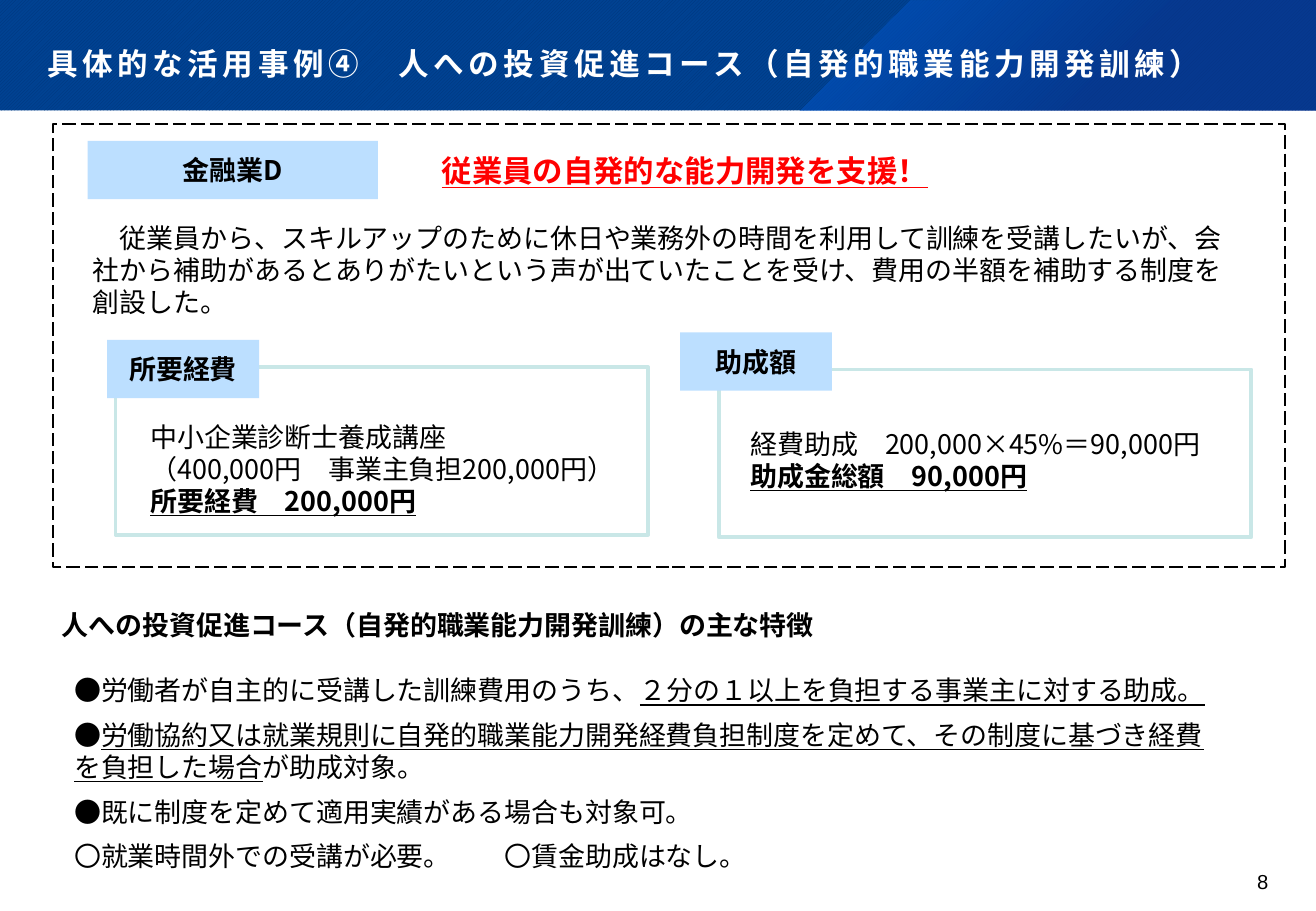
from lxml.etree import SubElement
from pptx import Presentation
from pptx.dml.color import RGBColor
from pptx.enum.dml import MSO_LINE, MSO_PATTERN
from pptx.enum.shapes import MSO_SHAPE
from pptx.enum.text import MSO_ANCHOR, MSO_AUTO_SIZE, PP_ALIGN
from pptx.oxml import parse_xml
from pptx.oxml.ns import nsdecls, qn
from pptx.util import Pt

BLACK = RGBColor(0x00, 0x00, 0x00)
WHITE = RGBColor(0xFF, 0xFF, 0xFF)
RED = RGBColor(0xFF, 0x00, 0x00)
LABEL_BLUE = RGBColor(0xBC, 0xDF, 0xFF)
FRAME_MINT = RGBColor(0xC9, 0xE7, 0xE7)
BAND_DARK = RGBColor(0x00, 0x35, 0x79)
BAND_BLUE = RGBColor(0x00, 0x42, 0x92)
GLOW_LIGHT = RGBColor(0x00, 0x64, 0xDF)
GLOW_DARK = RGBColor(0x0C, 0x33, 0x8E)

JAPANESE_FONT = "Noto Sans CJK JP"
PAGE_WIDTH, PAGE_HEIGHT = 779.76, 540
BAND_HEIGHT = 65.5
LINE_PITCH = Pt(19)
BOLD = {"bold": True}
UNDERLINE = {"underline": True}
TOTAL = BOLD | UNDERLINE


def write(box, paragraphs, size=16, font=JAPANESE_FONT, color=BLACK, bold=False,
          underline=False, tracking=0, align=PP_ALIGN.LEFT, anchor=MSO_ANCHOR.MIDDLE,
          insets=(7.2, 3.6, 7.2, 3.6), line_spacing=None, gap=0):
    """Fill a box with paragraphs, each a list of (text, overrides) spans."""
    frame = box.text_frame
    frame.word_wrap = True
    frame.auto_size = MSO_AUTO_SIZE.NONE
    frame.vertical_anchor = anchor
    (frame.margin_left, frame.margin_top,
     frame.margin_right, frame.margin_bottom) = map(Pt, insets)
    for index, spans in enumerate(paragraphs):
        para = frame.paragraphs[0] if index == 0 else frame.add_paragraph()
        para.alignment = align
        para.line_spacing = line_spacing
        para.space_before = Pt(gap if index else 0)
        for text, overrides in spans:
            span = para.add_run()
            span.text = text
            span.font.size = Pt(size)
            span.font.bold = overrides.get("bold", bold)
            span.font.underline = overrides.get("underline", underline)
            span.font.color.rgb = color
            span.font.name = font
            properties = span.font._element
            SubElement(properties, qn("a:ea")).set("typeface", JAPANESE_FONT)
            if tracking:
                properties.set("spc", str(round(tracking * 100)))


def place(shape, left, top, width, height):
    shape.left, shape.top, shape.width, shape.height = map(Pt, (left, top, width, height))


def add_text(page, bounds, paragraphs, **text_format):
    box = page.shapes.add_textbox(*map(Pt, bounds))
    write(box, paragraphs, **text_format)


def add_panel(page, bounds, fill=None, line=None, weight=1, dash=None,
              kind=MSO_SHAPE.RECTANGLE):
    panel = page.shapes.add_shape(kind, *map(Pt, bounds))
    panel.shadow.inherit = False
    if fill is None:
        panel.fill.background()
    else:
        panel.fill.solid()
        panel.fill.fore_color.rgb = fill
    if line is None:
        panel.line.fill.background()
    else:
        panel.line.color.rgb = line
        panel.line.width = Pt(weight)
        panel.line.dash_style = dash
    return panel


def add_label(page, bounds, text):
    label = add_panel(page, bounds, fill=LABEL_BLUE)
    write(label, [[(text, BOLD)]], align=PP_ALIGN.CENTER)


def add_glow(page, width, height):
    """Slanted overlay at the right end of the band, with a translucent radial gradient."""
    builder = page.shapes.build_freeform(Pt(width - 240.5), Pt(0))
    builder = page.shapes.build_freeform(Pt(width - 240.5), Pt(0.5))
    builder.add_line_segments(
        [(Pt(width), Pt(0)), (Pt(width), Pt(height)), (Pt(width - 306), Pt(height))], close=True)
    glow = builder.convert_to_shape()
    glow.shadow.inherit = False
    glow.line.fill.background()
    glow.fill.background()
    stops = "".join(
        f'<a:gs pos="{position}000"><a:srgbClr val="{color}">'
        f'<a:alpha val="{opacity}000"/></a:srgbClr></a:gs>'
        for position, color, opacity in ((0, GLOW_LIGHT, 50), (62, GLOW_DARK, 55)))
    gradient = parse_xml(
        f'<a:gradFill {nsdecls("a")}><a:gsLst>{stops}</a:gsLst><a:path path="circle">'
        '<a:fillToRect r="100000" b="100000"/></a:path></a:gradFill>')
    properties = glow.element.spPr
    properties.replace(properties.find(qn("a:noFill")), gradient)


def add_title_band(page, width, height):
    band = add_panel(page, (0, 0, width, height))
    band.fill.patterned()
    band.fill.pattern = MSO_PATTERN.DARK_UPWARD_DIAGONAL
    band.fill.fore_color.rgb = BAND_DARK
    band.fill.back_color.rgb = BAND_BLUE
    add_glow(page, width, height)
    title = page.shapes.title
    page.shapes.element.append(title.element)
    place(title, 0, 12.5, width, 46)
    write(title, [[("具体的な活用事例④　人への投資促進コース（自発的職業能力開発訓練）", {})]],
          size=18.1, font="Roboto", color=WHITE, bold=True, tracking=2.7,
          anchor=MSO_ANCHOR.BOTTOM, insets=(28, 0, 26, 10), line_spacing=0.9)


def add_amount(page, frame_bounds, label_offset, label, text_box, paragraphs):
    """Mint frame with a label on its corner; the offsets are from the frame's corner."""
    left, top = frame_bounds[:2]
    add_panel(page, frame_bounds, line=FRAME_MINT, weight=2.25)
    add_label(page, (left + label_offset[0], top + label_offset[1], 90, 34.5), label)
    across, down, width = text_box
    add_text(page, (left + across, top + down, width, 79), paragraphs, line_spacing=LINE_PITCH)


def add_case(page, left, top, width, height):
    add_panel(page, (left, top, width, height), line=BLACK, dash=MSO_LINE.LONG_DASH)
    add_label(page, (left + 20.5, top + 10, 172, 34.5), "金融業D")
    headline = add_panel(page, (left + 204, top + 11.5, 340.5, 32.5),
                         kind=MSO_SHAPE.ROUNDED_RECTANGLE)
    write(headline, [[("従業員の自発的な能力開発を支援！", TOTAL)]],
          size=18, color=RED, align=PP_ALIGN.CENTER)
    add_text(page, (left + 16.5, top + 52, 695.5, 69), [[(
        "　従業員から、スキルアップのために休日や業務外の時間を利用して訓練を受講したいが、"
        "会社から補助があるとありがたいという声が出ていたことを受け、"
        "費用の半額を補助する制度を創設した。", {})]], line_spacing=LINE_PITCH)
    add_amount(page, (left + 37, top + 144, 315.5, 99.5), (-5, -16), "所要経費",
               (13.5, 21, 307.5), [
                   [("中小企業診断士養成講座", {})],
                   [("（400,000円　事業主負担200,000円）", {})],
                   [("所要経費　200,000円", TOTAL)]])
    add_amount(page, (left + 394.5, top + 145.5, 315.5, 99.5), (-23, -22), "助成額",
               (11.5, 14, 294.5), [
                   [("経費助成　200,000×45%＝90,000円", {})],
                   [("助成金総額　90,000円", TOTAL)]])


def add_features(page, left, top, width, height):
    add_text(page, (left, top, 474.5, 34.5),
             [[("人への投資促進コース（自発的職業能力開発訓練）の主な特徴", BOLD)]])
    features = page.placeholders[1]
    place(features, left + 7.2, top + 43, width - 7.2, height - 43)
    write(features, [
        [("●労働者が自主的に受講した訓練費用のうち、", {}),
         ("２分の１以上を負担する事業主に対する助成。", UNDERLINE)],
        [("●", {}),
         ("労働協約又は就業規則に自発的職業能力開発経費負担制度を定めて、"
          "その制度に基づき経費を負担した場合", UNDERLINE),
         ("が助成対象。", {})],
        [("●既に制度を定めて適用実績がある場合も対象可。", {})],
        [("〇就業時間外での受講が必要。　　〇賃金助成はなし。", {})],
    ], anchor=MSO_ANCHOR.TOP, line_spacing=LINE_PITCH, gap=7.5)
    for para in features.text_frame.paragraphs:
        properties = para._p.get_or_add_pPr()
        properties.set("marL", "0")
        properties.set("indent", "0")
        SubElement(properties, qn("a:buNone"))


def main():
    deck = Presentation()
    deck.slide_width, deck.slide_height = Pt(PAGE_WIDTH), Pt(PAGE_HEIGHT)
    page = deck.slides.add_slide(deck.slide_layouts[1])
    add_title_band(page, PAGE_WIDTH, BAND_HEIGHT)
    add_case(page, 31.5, 73.5, 730, 262.5)
    add_features(page, 29.5, 353, 702.5, 166)
    add_text(page, (702, 515, 49.5, 21.5), [[("8", {})]], size=12, font="Arial",
             align=PP_ALIGN.RIGHT, anchor=MSO_ANCHOR.TOP, insets=(0, 0, 0, 0))
    deck.save("out.pptx")


if __name__ == "__main__":
    main()
